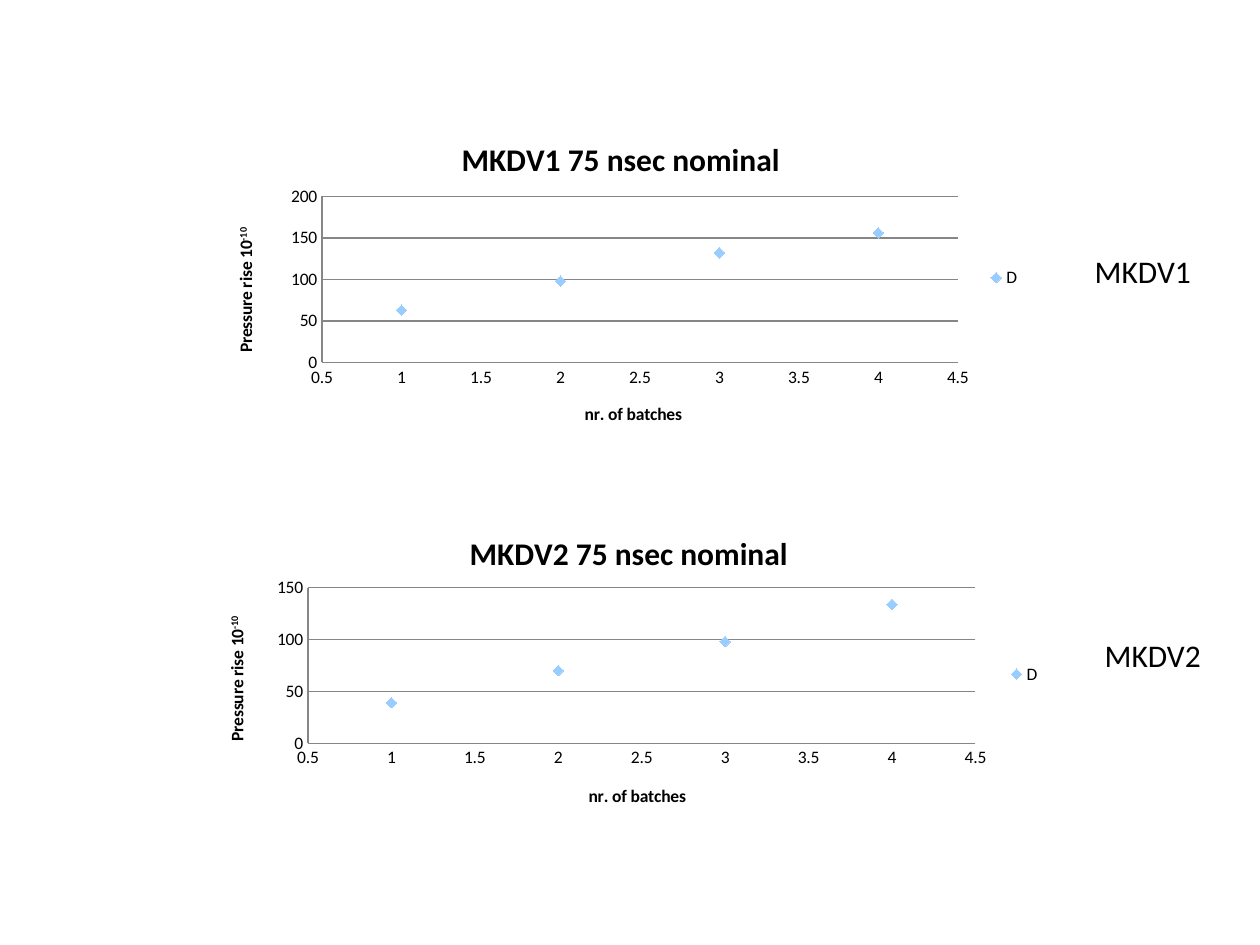
"""Build a slide with two scatter charts of pressure rise against number of batches."""
from pptx import Presentation
from pptx.chart.data import XyChartData
from pptx.dml.color import RGBColor as RGB
from pptx.enum.chart import XL_CHART_TYPE as ChartType, XL_LEGEND_POSITION as LegendSpot
from pptx.enum.chart import XL_MARKER_STYLE as MarkerStyle, XL_TICK_MARK as TickMark
from pptx.oxml import parse_xml
from pptx.oxml.ns import nsdecls
from pptx.util import Pt

COLORS = {"text": "000000", "marker": "99CCFF", "axis": "868686"}
FONT = "Calibri"


def write(frame, text, size=10, bold=False, raised=False):
    run = frame.paragraphs[0].add_run()
    run.text = text
    run.font.name = FONT
    run.font.size = Pt(size)
    run.font.bold = bold
    run.font.color.rgb = RGB.from_string(COLORS["text"])
    if raised:
        run.font._element.set("baseline", "30000")


def place(part, **spots):
    for old in part.xpath("c:layout"):
        part.remove(old)
    modes = "".join(f'<c:{axis}Mode val="edge"/>' for axis in "xy")
    values = "".join(f'<c:{key} val="{value}"/>' for key, value in spots.items())
    target = '<c:layoutTarget val="inner"/>' if "w" in spots else ""
    layout = parse_xml(f'<c:layout {nsdecls("c")}><c:manualLayout>{target}{modes}{values}'
                       '</c:manualLayout></c:layout>')
    texts = part.xpath("c:tx")
    if texts:
        texts[0].addnext(layout)
    else:
        part.insert(0, layout)


deck = Presentation()
deck.slide_width, deck.slide_height = Pt(720), Pt(540)
slide = deck.slides.add_slide(deck.slide_layouts[6])

magnets = [
    {"name": "MKDV1", "rises": [63, 98, 132, 156], "top_rise": 200,
     "box": (112.3, 61.9, 478.1, 193.7), "label": (618.5, 140.4),
     "plot": {"x": 0.15, "y": 0.26, "w": 0.76, "h": 0.49},
     "title": (0.31, 0.07), "batches": (0.46, 0.86), "pressure": (0.04, 0.34)},
    {"name": "MKDV2", "rises": [39, 70, 98, 134], "top_rise": 150,
     "box": (106.6, 286.6, 495.4, 197.3), "label": (624.2, 360),
     "plot": {"x": 0.14, "y": 0.25, "w": 0.77, "h": 0.45},
     "title": (0.32, 0.07), "batches": (0.46, 0.81), "pressure": (0.04, 0.32)},
]

for magnet in magnets:
    measurements = XyChartData()
    series_data = measurements.add_series("D")
    for batch, rise in enumerate(magnet["rises"], start=1):
        series_data.add_data_point(batch, rise)
    chart = slide.shapes.add_chart(
        ChartType.XY_SCATTER, *map(Pt, magnet["box"]), measurements).chart
    chart.font.name = FONT
    chart.font.size = Pt(10)
    chart.font.color.rgb = RGB.from_string(COLORS["text"])
    chart.has_legend = True
    chart.legend.position = LegendSpot.RIGHT
    chart.legend.include_in_layout = False
    chart.plots[0].vary_by_categories = False

    rises = chart.plots[0].series[0]
    rises.smooth = False
    rises.format.line.fill.background()
    rises.marker.style = MarkerStyle.DIAMOND
    rises.marker.size = 6
    rises.marker.format.fill.solid()
    rises.marker.format.fill.fore_color.rgb = RGB.from_string(COLORS["marker"])
    rises.marker.format.line.fill.background()

    batches, pressure = chart.category_axis, chart.value_axis
    batches.minimum_scale, batches.maximum_scale, batches.major_unit = 0.5, 4.5, 0.5
    pressure.minimum_scale, pressure.maximum_scale, pressure.major_unit = 0, magnet["top_rise"], 50
    batches.has_major_gridlines, pressure.has_major_gridlines = False, True
    for axis in (batches, pressure):
        axis.major_tick_mark = axis.minor_tick_mark = TickMark.NONE
        axis.tick_labels.number_format = "General"
        axis.tick_labels.number_format_is_linked = False
    for rule in (batches, pressure, pressure.major_gridlines):
        rule.format.line.color.rgb = RGB.from_string(COLORS["axis"])
        rule.format.line.width = Pt(0.75)

    write(chart.chart_title.text_frame, f"{magnet['name']} 75 nsec nominal", size=18, bold=True)
    write(batches.axis_title.text_frame, "nr. of batches", bold=True)
    write(pressure.axis_title.text_frame, "Pressure rise 10", bold=True)
    write(pressure.axis_title.text_frame, "-10", bold=True, raised=True)

    place(chart.element.xpath("c:chart/c:plotArea")[0], **magnet["plot"])
    for heading, key in ((chart.chart_title, "title"), (batches.axis_title, "batches"),
                         (pressure.axis_title, "pressure")):
        place(heading.element, **dict(zip("xy", magnet[key])))

for magnet in magnets:
    label = slide.shapes.add_textbox(*map(Pt, magnet["label"]), Pt(69.8), Pt(28.8))
    label.text_frame.word_wrap = False
    write(label.text_frame, magnet["name"], size=18)

deck.save("out.pptx")
